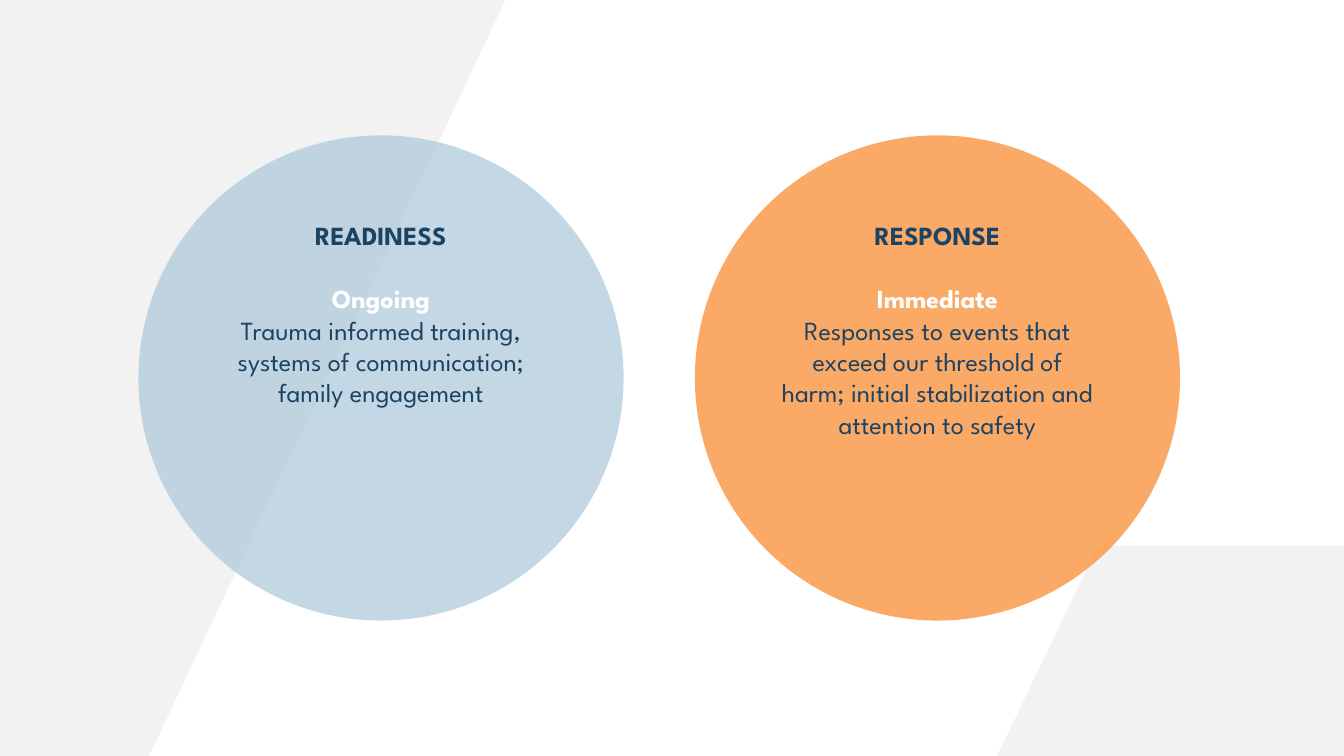
from dataclasses import dataclass

from lxml import etree
from pptx import Presentation
from pptx.dml.color import RGBColor
from pptx.enum.shapes import MSO_SHAPE
from pptx.enum.text import MSO_ANCHOR, PP_ALIGN
from pptx.oxml.ns import qn
from pptx.util import Inches, Pt

OVAL = MSO_SHAPE.OVAL
TOP = MSO_ANCHOR.TOP
CENTER = PP_ALIGN.CENTER


@dataclass(frozen=True)
class Theme:
    """Colours, typeface and type sizes of the slide."""
    font: str = "League Spartan"
    size: float = 14
    heading_gap: float = 16.8
    navy: str = "1C4363"
    white: str = "FFFFFF"
    band: str = "F2F2F2"
    blue: str = "A7C6D8"
    orange: str = "F9923E"


THEME = Theme()
WIDTH = 10
HEIGHT = WIDTH * 9 / 16
DIAMETER = 3.61
CIRCLE_TOP = (HEIGHT - DIAMETER) / 2
INSET = 0.1

LEFT_BAND = [(0, 0), (3.76, 0), (1.11, HEIGHT), (0, HEIGHT)]
CORNER_BAND = [(WIDTH, HEIGHT), (7.42, HEIGHT), (8.17, 4.06), (WIDTH, 4.06)]

PHASES = [
    (1.03, THEME.blue, 67, "READINESS", "Ongoing",
     "Trauma informed training, systems of communication; family engagement"),
    (5.17, THEME.orange, 79, "RESPONSE", "Immediate",
     "Responses to events that exceed our threshold of harm; "
     "initial stabilization and attention to safety"),
]


def paint(shape, color, opacity=100):
    """Give a shape a flat fill with no line or shadow."""
    shape.shadow.inherit = False
    shape.line.fill.background()
    shape.fill.solid()
    shape.fill.fore_color.rgb = RGBColor.from_string(color)
    if opacity < 100:
        tint = shape.fill._xPr.find(qn("a:solidFill"))[0]
        etree.SubElement(tint, qn("a:alpha"), val=str(opacity * 1000))


def add_band(slide, corners):
    """Draw a slanted background band through the given corners."""
    points = [(Inches(x), Inches(y)) for x, y in corners]
    builder = slide.shapes.build_freeform(*points[0], scale=1.0)
    builder.add_line_segments(points[1:], close=True)
    paint(builder.convert_to_shape(), THEME.band)


def write_line(paragraph, text, color, bold, gap=0):
    """Write one centred paragraph as a single styled run."""
    paragraph.alignment = CENTER
    paragraph.space_before = Pt(gap)
    run = paragraph.add_run()
    run.text = text
    run.font.name = THEME.font
    run.font.size = Pt(THEME.size)
    run.font.bold = bold
    run.font.color.rgb = RGBColor.from_string(color)


def add_phase(slide, left, color, opacity, title, timing, description):
    """Draw a phase circle with its title, timing and description."""
    circle = slide.shapes.add_shape(
        OVAL, Inches(left), Inches(CIRCLE_TOP), Inches(DIAMETER), Inches(DIAMETER))
    paint(circle, color, opacity)
    frame = circle.text_frame
    frame.word_wrap = True
    frame.vertical_anchor = TOP
    frame.margin_left = frame.margin_right = Inches(INSET)
    frame.margin_top = frame.margin_bottom = Inches(INSET)
    write_line(frame.paragraphs[0], title, THEME.navy, True)
    write_line(frame.add_paragraph(), timing, THEME.white, True, THEME.heading_gap)
    write_line(frame.add_paragraph(), description, THEME.navy, False)


def main():
    """Build the readiness and response slide."""
    deck = Presentation()
    deck.slide_width, deck.slide_height = Inches(WIDTH), Inches(HEIGHT)
    slide = deck.slides.add_slide(deck.slide_layouts[6])
    for corners in (LEFT_BAND, CORNER_BAND):
        add_band(slide, corners)
    for phase in PHASES:
        add_phase(slide, *phase)
    deck.save("out.pptx")


if __name__ == "__main__":
    main()
